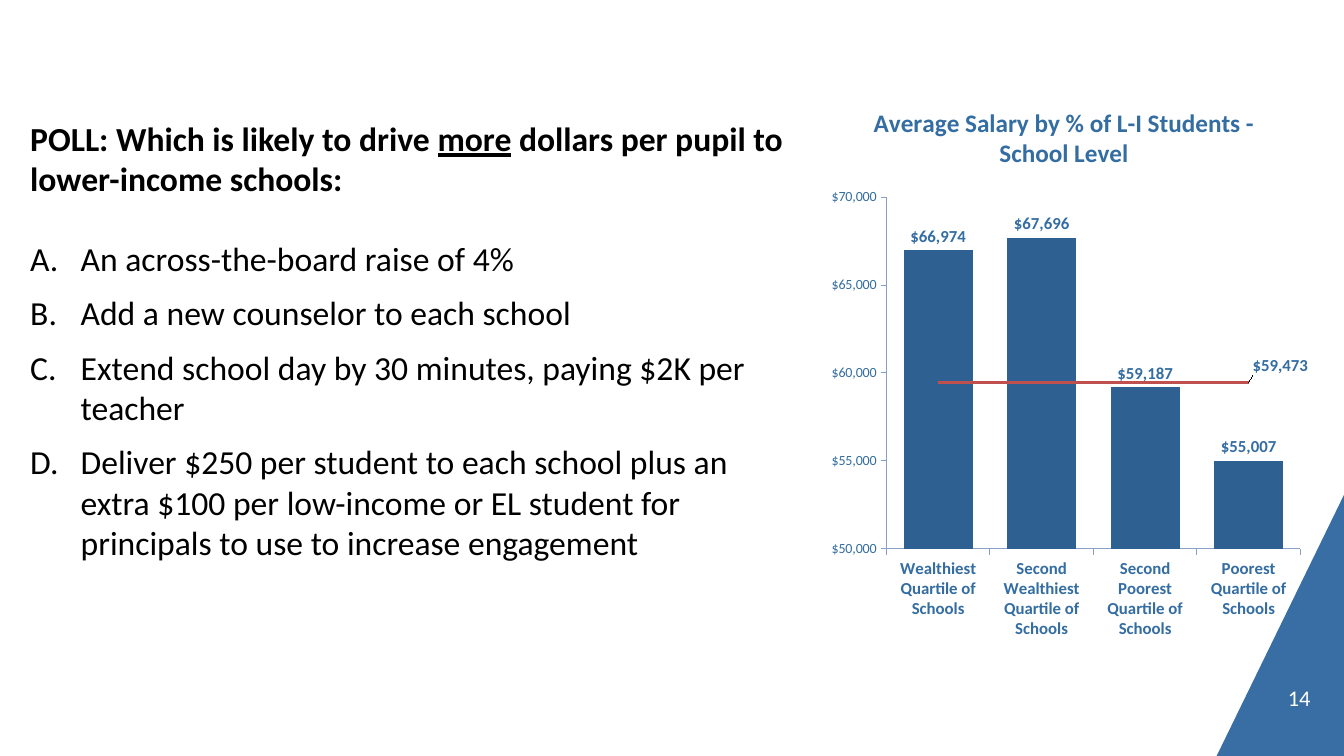
from lxml.etree import SubElement
from pptx import Presentation
from pptx.chart.data import CategoryChartData
from pptx.dml.color import RGBColor
from pptx.enum.chart import XL_CHART_TYPE, XL_LABEL_POSITION, XL_MARKER_STYLE, XL_TICK_MARK
from pptx.enum.text import MSO_ANCHOR, MSO_AUTO_SIZE, PP_ALIGN
from pptx.oxml import parse_xml
from pptx.oxml.ns import nsdecls, qn
from pptx.util import Inches, Pt

COLUMNS, ROWS = 40, 30
DOLLARS = '"$"#,##0'
SALARY_TITLE = "Average Salary by % of L-I Students - School Level"
SALARIES = {
    "Wealthiest Quartile of Schools": 66974,
    "Second Wealthiest Quartile of Schools": 67696,
    "Second Poorest Quartile of Schools": 59187,
    "Poorest Quartile of Schools": 55007,
}
AVERAGE = 59473
QUESTION = ("POLL: Which is likely to drive ", "more",
            " dollars per pupil to lower-income schools:")
ANSWERS = (
    "An across-the-board raise of 4%",
    "Add a new counselor to each school",
    "Extend school day by 30 minutes, paying $2K per teacher",
    "Deliver $250 per student to each school plus an extra $100 per low-income "
    "or EL student for principals to use to increase engagement",
)


def color(hex_code):
    return RGBColor.from_string(hex_code)


def manual_layout(**shares):
    """Return a chart layout element; the order of shares is kept."""
    entries = "".join(f'<c:{name} val="{share}"/>' for name, share in shares.items())
    return parse_xml(f'<c:layout {nsdecls("c")}><c:manualLayout>{entries}'
                     "</c:manualLayout></c:layout>")


class PollSlide:
    font_name = "Calibri"
    ink, paper, wedge_fill = "000000", "FFFFFF", "386EA3"
    chart_ink, bar_fill, average_line, axis_line = "346DA2", "2E6092", "C0504D", "8A9FC4"

    def __init__(self, deck):
        self.column = deck.slide_width / COLUMNS
        self.row = deck.slide_height / ROWS
        self.slide = deck.slides.add_slide(deck.slide_layouts[1])
        title = self.slide.shapes.title.element
        title.getparent().remove(title)

    def place(self, left, top, width, height):
        return (round(left * self.column), round(top * self.row),
                round(width * self.column), round(height * self.row))

    def style(self, font, size, hex_code, bold=False):
        font.name, font.size, font.bold = self.font_name, Pt(size), bold
        font.color.rgb = color(hex_code)

    def wedge(self, *corners):
        points = [self.place(x, y, 0, 0)[:2] for x, y in corners]
        outline = self.slide.shapes.build_freeform(*points[0], scale=1.0)
        outline.add_line_segments(points[1:], close=True)
        corner = outline.convert_to_shape()
        corner.shadow.inherit = False
        corner.fill.solid()
        corner.fill.fore_color.rgb = color(self.wedge_fill)
        corner.line.fill.background()

    def page_number(self, number, *cells):
        frame = self.slide.shapes.add_textbox(*self.place(*cells)).text_frame
        frame.word_wrap = True
        frame.vertical_anchor = MSO_ANCHOR.BOTTOM
        frame.margin_left = frame.margin_right = frame.margin_top = frame.margin_bottom = 0
        frame.text = number
        frame.paragraphs[0].alignment = PP_ALIGN.RIGHT
        self.style(frame.paragraphs[0].runs[0].font, 16, self.paper)

    def poll(self, question, answers, *cells):
        body = self.slide.placeholders[1]
        body.left, body.top, body.width, body.height = self.place(*cells)
        frame = body.text_frame
        frame.word_wrap = True
        frame.auto_size = MSO_AUTO_SIZE.SHAPE_TO_FIT_TEXT
        frame.vertical_anchor = MSO_ANCHOR.TOP
        heading = frame.paragraphs[0]
        self.indent(heading, 0)
        SubElement(heading._p.get_or_add_pPr(), qn("a:buNone"))
        heading.space_before, heading.space_after = Pt(0), Pt(24)
        for part in question:
            run = heading.add_run()
            run.text = part
            self.style(run.font, 24, self.ink, bold=True)
        heading.runs[1].font.underline = True
        for answer in answers:
            choice = frame.add_paragraph()
            choice.text = answer
            self.indent(choice, 0.5)
            SubElement(choice._p.get_or_add_pPr(), qn("a:buFont"), typeface="+mj-lt")
            SubElement(choice._p.get_or_add_pPr(), qn("a:buAutoNum"), type="alphaUcPeriod")
            choice.space_before, choice.space_after = Pt(4), Pt(6)
            self.style(choice.runs[0].font, 24, self.ink)

    def indent(self, paragraph, hanging):
        properties = paragraph._p.get_or_add_pPr()
        properties.set("marL", str(Inches(hanging)))
        properties.set("indent", str(-Inches(hanging)))

    def salary_chart(self, *cells):
        salaries = CategoryChartData(number_format=DOLLARS)
        salaries.categories = list(SALARIES)
        salaries.add_series(SALARY_TITLE, list(SALARIES.values()))
        salaries.add_series("Series 2", [AVERAGE] * len(SALARIES))
        chart = self.slide.shapes.add_chart(
            XL_CHART_TYPE.COLUMN_CLUSTERED, *self.place(*cells), salaries).chart
        self.style(chart.font, 10, self.chart_ink)
        chart.has_legend = False
        heading = chart.chart_title.text_frame
        heading.text = SALARY_TITLE
        self.style(heading.paragraphs[0].runs[0].font, 18, self.chart_ink, bold=True)
        chart.chart_title.include_in_layout = False
        self.axes(chart)
        self.bars(chart.plots[0])
        self.average(chart)

    def axes(self, chart):
        for axis in (chart.category_axis, chart.value_axis):
            axis.has_major_gridlines = False
            axis.major_tick_mark = XL_TICK_MARK.OUTSIDE
            axis.format.line.color.rgb = color(self.axis_line)
            axis.format.line.width = Pt(0.75)
        self.style(chart.category_axis.tick_labels.font, 12, self.chart_ink, bold=True)
        scale = chart.value_axis
        scale.minimum_scale, scale.maximum_scale, scale.major_unit = 50000, 70000, 5000
        scale.tick_labels.number_format = DOLLARS
        scale.tick_labels.number_format_is_linked = False
        self.style(scale.tick_labels.font, 10, self.chart_ink)

    def bars(self, plot):
        plot.gap_width = 50
        plot.vary_by_categories = False
        salary = plot.series[0]
        salary.format.fill.solid()
        salary.format.fill.fore_color.rgb = color(self.bar_fill)
        labels = salary.data_labels
        labels.show_value = True
        labels.number_format, labels.number_format_is_linked = DOLLARS, False
        labels.position = XL_LABEL_POSITION.OUTSIDE_END
        self.style(labels.font, 12, self.chart_ink, bold=True)

    def average(self, chart):
        """Turn the second series into a line over the bars and label its end."""
        columns = chart.plots[0]._element
        series = columns.findall(qn("c:ser"))[1]
        for bar_only in series.findall(qn("c:invertIfNegative")):
            series.remove(bar_only)
        axis_ids = "".join(f'<c:axId val="{axis.get("val")}"/>'
                           for axis in columns.findall(qn("c:axId")))
        lines = parse_xml(f'<c:lineChart {nsdecls("c")}><c:grouping val="standard"/>'
                          f'<c:varyColors val="0"/><c:marker val="1"/>{axis_ids}</c:lineChart>')
        lines.insert(2, series)
        columns.addnext(lines)
        area = columns.getparent()
        for old in area.findall(qn("c:layout")):
            area.remove(old)
        area.insert(0, manual_layout(layoutTarget="inner", xMode="edge", yMode="edge",
                                     x=0.14, y=0.2, w=0.84, h=0.62))
        line = chart.plots[1].series[0]
        line.smooth = False
        line.marker.style = XL_MARKER_STYLE.NONE
        line.format.line.color.rgb = color(self.average_line)
        line.format.line.width = Pt(2.25)
        label = line.points[len(SALARIES) - 1].data_label
        self.style(label.font, 12, self.chart_ink, bold=True)
        label.position = XL_LABEL_POSITION.RIGHT
        index = series.find(f'{qn("c:dLbls")}/{qn("c:dLbl")}/{qn("c:idx")}')
        number_format = parse_xml(f'<c:numFmt {nsdecls("c")} sourceLinked="0"/>')
        number_format.set("formatCode", DOLLARS)
        index.addnext(number_format)
        index.addnext(manual_layout(x=0, y=-0.03))


def main():
    deck = Presentation()
    deck.slide_width, deck.slide_height = Inches(13.33), Inches(7.5)
    page = PollSlide(deck)
    page.wedge((40, 19.64), (36.21, 30), (40, 30))
    page.page_number("14", 37.5, 27, 1.5, 1.2)
    page.poll(QUESTION, ANSWERS, 0.6, 4.48, 23.28, 18.2)
    page.salary_chart(24.33, 3.32, 14.67, 22.52)
    deck.save("out.pptx")


if __name__ == "__main__":
    main()
